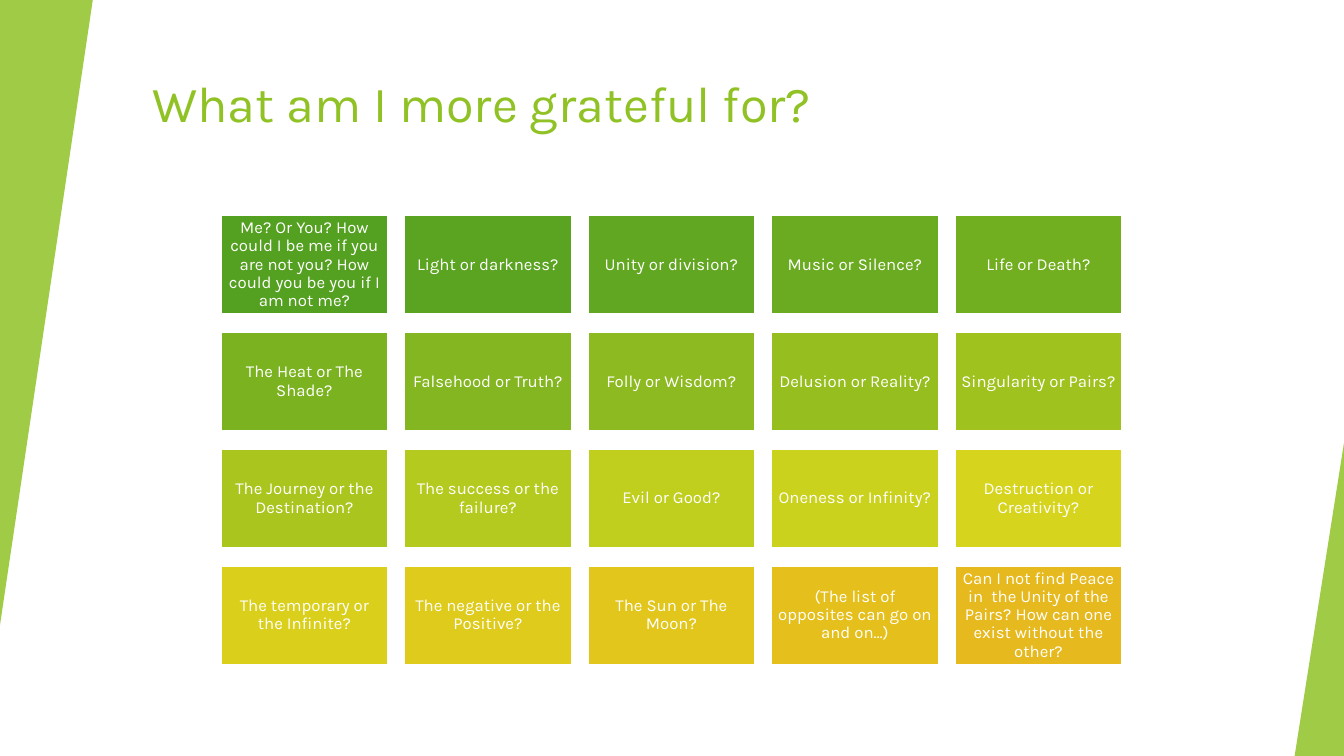
from lxml import etree
from pptx import Presentation
from pptx.dml.color import RGBColor
from pptx.enum.shapes import MSO_SHAPE
from pptx.enum.text import MSO_ANCHOR, PP_ALIGN
from pptx.oxml.ns import qn
from pptx.util import Inches, Pt

RECTANGLE, TRIANGLE = MSO_SHAPE.RECTANGLE, MSO_SHAPE.ISOSCELES_TRIANGLE
TOP, MIDDLE = MSO_ANCHOR.TOP, MSO_ANCHOR.MIDDLE
LEFT, CENTER = PP_ALIGN.LEFT, PP_ALIGN.CENTER

FONT = "Karla"
GREEN, WHITE = "90C226", "FFFFFF"
WIDTH, HEIGHT = 13.33, 7.5
COLUMNS = 5
GRID_LEFT, GRID_TOP = 2.19, 2.13
PITCH_X, PITCH_Y = 1.82, 1.16
TILE_WIDTH, TILE_HEIGHT = 1.66, 0.99

QUESTIONS = [
    ("54A021", "Me? Or You? How could I be me if you are not you? How could you be you if I am not me?"),
    ("5BA421", "Light or darkness?"),
    ("62A721", "Unity or division?"),
    ("6AAB21", "Music or Silence?"),
    ("72AF20", "Life or Death?"),
    ("7BB320", "The Heat or The Shade?"),
    ("83B620", "Falsehood or Truth?"),
    ("8DBA20", "Folly or Wisdom?"),
    ("96BE1F", "Delusion or Reality?"),
    ("A0C21F", "Singularity or Pairs?"),
    ("AAC61E", "The Journey or the Destination?"),
    ("B5CA1E", "The success or the failure?"),
    ("C0CE1E", "Evil or Good?"),
    ("CBD21D", "Oneness or Infinity?"),
    ("D6D41D", "Destruction or Creativity?"),
    ("DAD01C", "The temporary or the Infinite?"),
    ("DECB1C", "The negative or the Positive?"),
    ("E2C61B", "The Sun or The Moon?"),
    ("E5C01C", "(The list of opposites can go on and on…)"),
    ("E6B91E", "Can I not find Peace in  the Unity of the Pairs? How can one exist without the other?"),
]


def add_filled(kind, left, top, width, height, color):
    box = page.shapes.add_shape(kind, Inches(left), Inches(top), Inches(width), Inches(height))
    box.shadow.inherit = False
    box.fill.solid()
    box.fill.fore_color.rgb = RGBColor.from_string(color)
    return box


def write(box, text, size, color, frame_format, para_format):
    frame = box.text_frame
    for name, value in frame_format.items():
        setattr(frame, name, value)
    para = frame.paragraphs[0]
    for name, value in para_format.items():
        setattr(para, name, value)
    span = para.add_run()
    span.text = text
    span.font.name = FONT
    span.font.size = Pt(size)
    span.font.color.rgb = RGBColor.from_string(color)


deck = Presentation()
deck.slide_width, deck.slide_height = Inches(WIDTH), Inches(HEIGHT)
page = deck.slides.add_slide(deck.slide_layouts[5])

title = page.shapes.title
title_place = {"left": 1.41, "top": 0.67, "width": 11.15, "height": 1.2}
for name, value in title_place.items():
    setattr(title, name, Inches(value))
write(title, "What am I more grateful for?", 36, GREEN,
      {"word_wrap": True, "vertical_anchor": TOP}, {"alignment": LEFT})

for left, top, width, height, rotation in [
    (0, 0, 0.92, 6.2, 180),
    (WIDTH - 0.49, HEIGHT - 3.11, 0.49, 3.11, 0),
]:
    wedge = add_filled(TRIANGLE, left, top, width, height, GREEN)
    wedge.adjustments[0] = 1
    wedge.rotation = rotation
    wedge.line.fill.background()
    fill_color = wedge.fill._xPr.find(".//" + qn("a:srgbClr"))
    etree.SubElement(fill_color, qn("a:alpha"), val="85000")

margin = Inches(0.05)
tile_frame = {
    "word_wrap": True,
    "vertical_anchor": MIDDLE,
    "margin_left": margin,
    "margin_right": margin,
    "margin_top": margin,
    "margin_bottom": margin,
}
tile_para = {"alignment": CENTER, "line_spacing": 0.9, "space_after": Pt(4.2)}

for index, (color, question) in enumerate(QUESTIONS):
    row, column = divmod(index, COLUMNS)
    tile = add_filled(RECTANGLE, GRID_LEFT + column * PITCH_X, GRID_TOP + row * PITCH_Y,
                      TILE_WIDTH, TILE_HEIGHT, color)
    tile.line.color.rgb = RGBColor.from_string(WHITE)
    tile.line.width = Pt(1.5)
    write(tile, question, 12, WHITE, tile_frame, tile_para)

deck.save("out.pptx")
